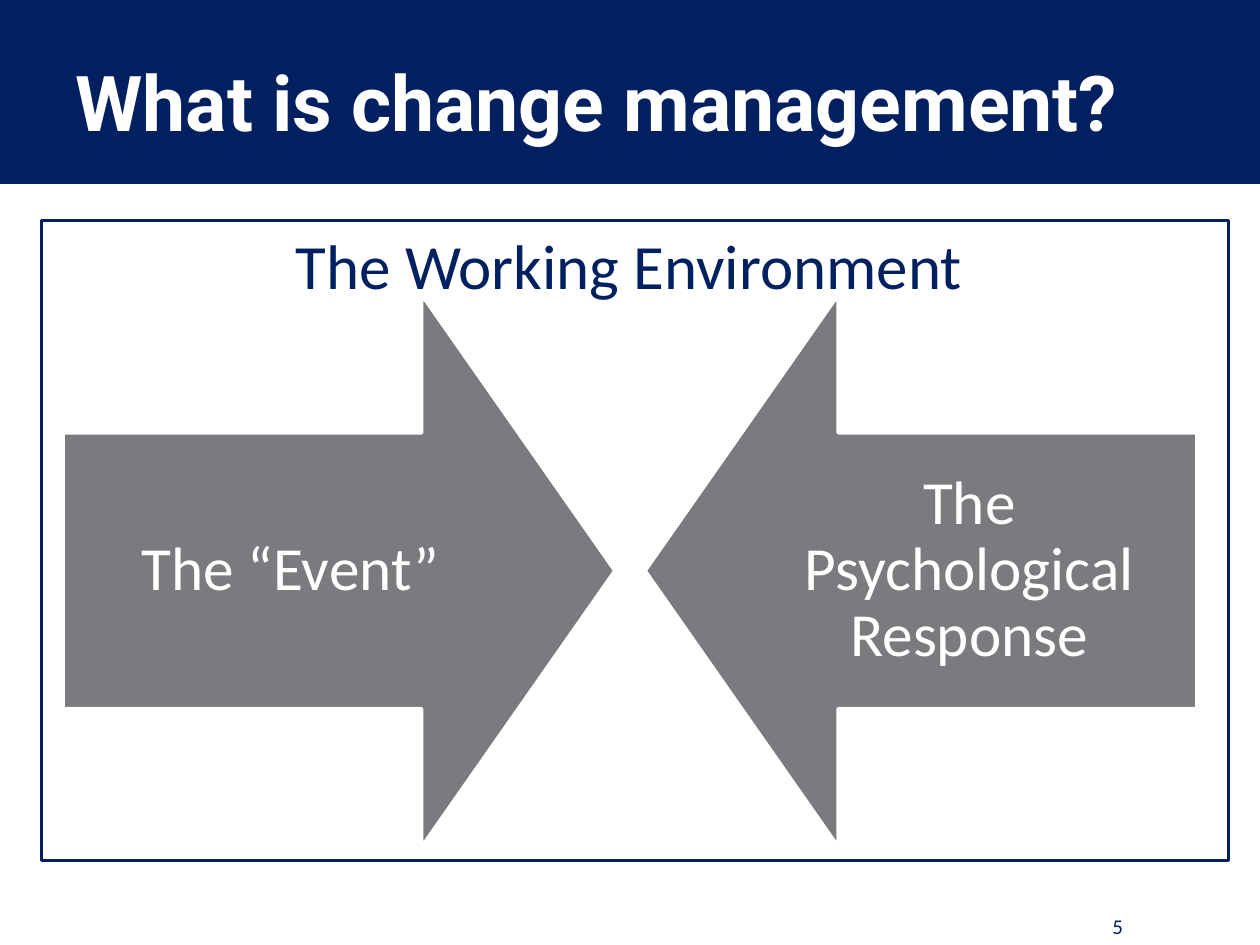
import pptx
import pptx.util
import pptx.dml.color
import pptx.enum.shapes
import pptx.enum.text
from pptx.util import Inches, Pt

NAVY = pptx.dml.color.RGBColor(0x00, 0x20, 0x60)
GRAY = pptx.dml.color.RGBColor(0x79, 0x7B, 0x7E)
WHITE = pptx.dml.color.RGBColor(0xFF, 0xFF, 0xFF)
SHAPES = pptx.enum.shapes.MSO_SHAPE
CENTER = pptx.enum.text.PP_ALIGN.CENTER
LEFT = pptx.enum.text.PP_ALIGN.LEFT
MIDDLE = pptx.enum.text.MSO_ANCHOR.MIDDLE
TOP = pptx.enum.text.MSO_ANCHOR.TOP

deck = pptx.Presentation()
deck.slide_width, deck.slide_height = Inches(10), Inches(7.5)
slide = deck.slides.add_slide(deck.slide_layouts[6])


def add_block(preset, left, top, width, height):
    block = slide.shapes.add_shape(
        preset, Inches(left), Inches(top), Inches(width), Inches(height))
    block.shadow.inherit = False
    return block


def write(holder, text, size, color, font="Calibri", bold=False,
          align=LEFT, anchor=MIDDLE):
    frame = holder.text_frame
    frame.word_wrap = True
    frame.vertical_anchor = anchor
    paragraph = frame.paragraphs[0]
    paragraph.alignment = align
    run = paragraph.add_run()
    run.text = text
    run.font.name = font
    run.font.size = Pt(size)
    run.font.bold = bold
    run.font.color.rgb = color
    return paragraph


banner = add_block(SHAPES.RECTANGLE, 0, 0, 10, 1.46)
banner.fill.solid()
banner.fill.fore_color.rgb = NAVY
banner.line.fill.background()

page_number = slide.shapes.add_textbox(Inches(8.58), Inches(7.2), Inches(0.58), Inches(0.3))
write(page_number, "5", 12, NAVY, align=CENTER)

title = slide.shapes.add_textbox(Inches(0.5), Inches(0.17), Inches(9), Inches(1.25))
write(title, "What is change management?", 44, WHITE, font="Roboto", bold=True)

# Two opposing forces, their tips facing each other
ARROW_SIZE = 4.38
for preset, left, label in (
    (SHAPES.RIGHT_ARROW, 0.5, "The “Event”"),
    (SHAPES.LEFT_ARROW, 5.12, "The Psychological Response"),
):
    force = add_block(preset, left, 2.34, ARROW_SIZE, ARROW_SIZE)
    force.adjustments[0] = 0.5
    force.adjustments[1] = 0.35
    force.fill.solid()
    force.fill.fore_color.rgb = GRAY
    force.line.color.rgb = WHITE
    force.line.width = Pt(2)
    frame = force.text_frame
    frame.margin_left = frame.margin_right = Inches(0.27)
    frame.margin_top = frame.margin_bottom = Inches(0.27)
    write(force, label, 35, WHITE, align=CENTER).line_spacing = 0.9

environment = add_block(SHAPES.RECTANGLE, 0.33, 1.75, 9.42, 5.08)
environment.fill.background()
environment.line.color.rgb = NAVY
environment.line.width = Pt(2)

heading = slide.shapes.add_textbox(Inches(2.25), Inches(1.75), Inches(5.58), Inches(0.71))
write(heading, "The Working Environment", 36, NAVY, anchor=TOP)

deck.save("out.pptx")
